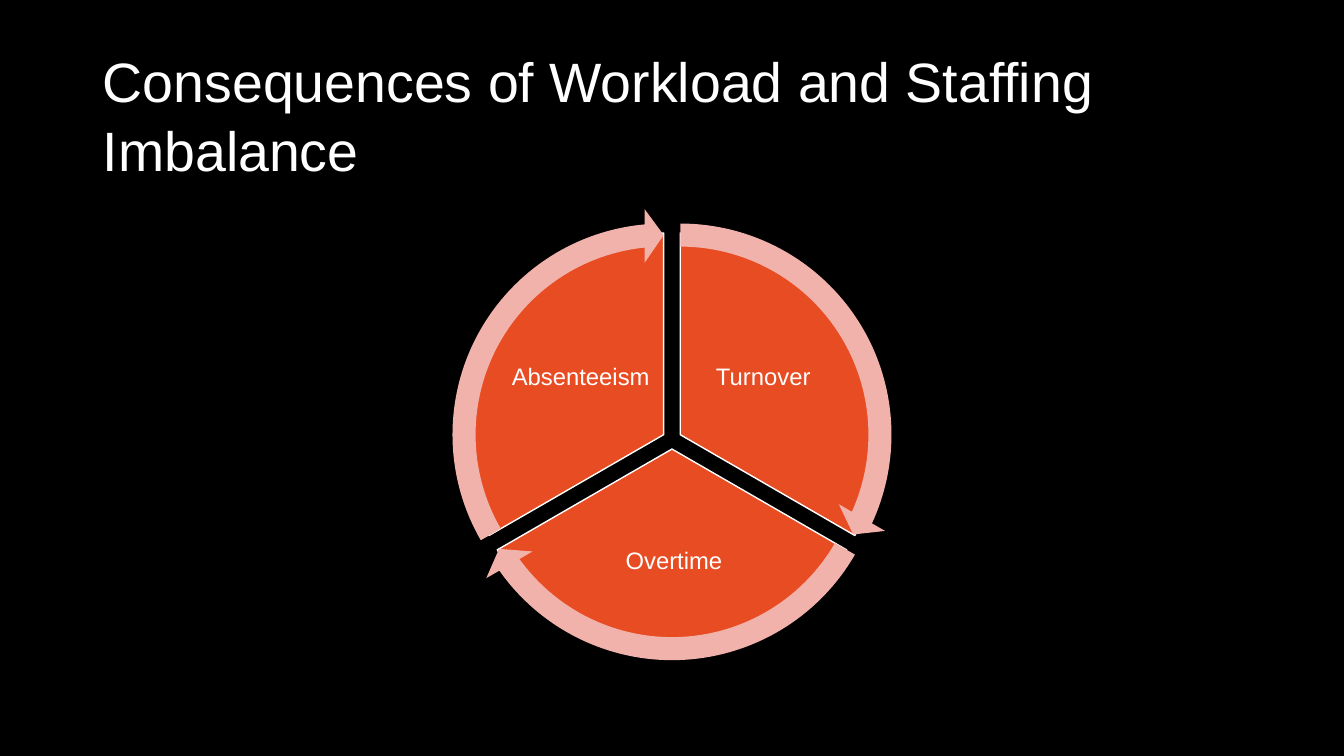
from math import cos, radians, sin

from pptx import Presentation
from pptx.dml.color import RGBColor
from pptx.enum.shapes import MSO_SHAPE as Shape
from pptx.enum.text import MSO_ANCHOR as Anchor, MSO_AUTO_SIZE as AutoSize, PP_ALIGN as Align
from pptx.util import Inches, Pt

COLORS = {"background": "000000", "text": "FFFFFF", "sector": "E84C22", "arrow": "F2B2AC"}
FONT = "Arial"
WIDTH, HEIGHT = 13.33, 7.5
ANGLE_UNIT = 0.6
HEAD_ANGLE = 5.46
SECTORS = [
    ("Turnover", 270, (0.905, -0.61), (1.43, 1.19)),
    ("Overtime", 30, (0.02, 1.21), (2.14, 1.05)),
    ("Absenteeism", 150, (-0.905, -0.61), (1.43, 1.19)),
]


def color(name):
    return RGBColor.from_string(COLORS[name])


def centered(x, y, width, height):
    return [Inches(value) for value in (x - width / 2, y - height / 2, width, height)]


def format_text(para, size):
    for span in para.runs:
        span.font.name = FONT
        span.font.size = Pt(size)
        span.font.color.rgb = color("text")


def add_title(page, text, left, top, width, height):
    title = page.shapes.title
    title.left, title.top, title.width, title.height = map(Inches, (left, top, width, height))
    frame = title.text_frame
    frame.text = text
    frame.auto_size = AutoSize.NONE
    frame.word_wrap = True
    frame.vertical_anchor = Anchor.MIDDLE
    para = frame.paragraphs[0]
    para.alignment = Align.LEFT
    para.line_spacing = 1.04
    format_text(para, 39.6)


def add_round_shape(page, preset, x, y, size, fill, adjustments):
    shape = page.shapes.add_shape(preset, *centered(x, y, size, size))
    shape.shadow.inherit = False
    shape.fill.solid()
    shape.fill.fore_color.rgb = color(fill)
    shape.line.fill.background()
    for index, value in enumerate(adjustments):
        shape.adjustments[index] = value
    return shape


def add_label(page, text, x, y, width, height):
    box = page.shapes.add_textbox(*centered(x, y, width, height))
    frame = box.text_frame
    frame.text = text
    frame.word_wrap = True
    frame.vertical_anchor = Anchor.MIDDLE
    frame.margin_left = frame.margin_right = Inches(0.02)
    frame.margin_top = frame.margin_bottom = Inches(0.02)
    para = frame.paragraphs[0]
    para.alignment = Align.CENTER
    para.line_spacing = 0.9
    format_text(para, 17)


def add_cycle(page, x, y, pie_size, arrow_size, gap):
    arrows = []
    for text, start, (label_x, label_y), label_size in SECTORS:
        end = (start + 120) % 360
        middle = radians(start + 60)
        center = x + gap * cos(middle), y + gap * sin(middle)
        sector = add_round_shape(page, Shape.PIE, *center, pie_size, "sector",
                                 [start * ANGLE_UNIT, end * ANGLE_UNIT])
        sector.line.color.rgb = color("text")
        sector.line.width = Pt(1)
        add_label(page, text, x + label_x, y + label_y, *label_size)
        arrows.append((center, start, end))
    for center, start, end in arrows:
        add_round_shape(page, Shape.CIRCULAR_ARROW, *center, arrow_size, "arrow",
                        [0.051, HEAD_ANGLE * ANGLE_UNIT, (end - HEAD_ANGLE) * ANGLE_UNIT,
                         start * ANGLE_UNIT, 0.059])


def main():
    deck = Presentation()
    deck.slide_width, deck.slide_height = Inches(WIDTH), Inches(HEIGHT)
    page = deck.slides.add_slide(deck.slide_layouts[5])
    page.background.fill.solid()
    page.background.fill.fore_color.rgb = color("background")
    add_title(page, "Consequences of Workload and Staffing Imbalance", 0.92, 0.4, 11.5, 1.45)
    add_cycle(page, WIDTH / 2, 4.36, 4, 4.49, 0.095)
    deck.save("out.pptx")


if __name__ == "__main__":
    main()
